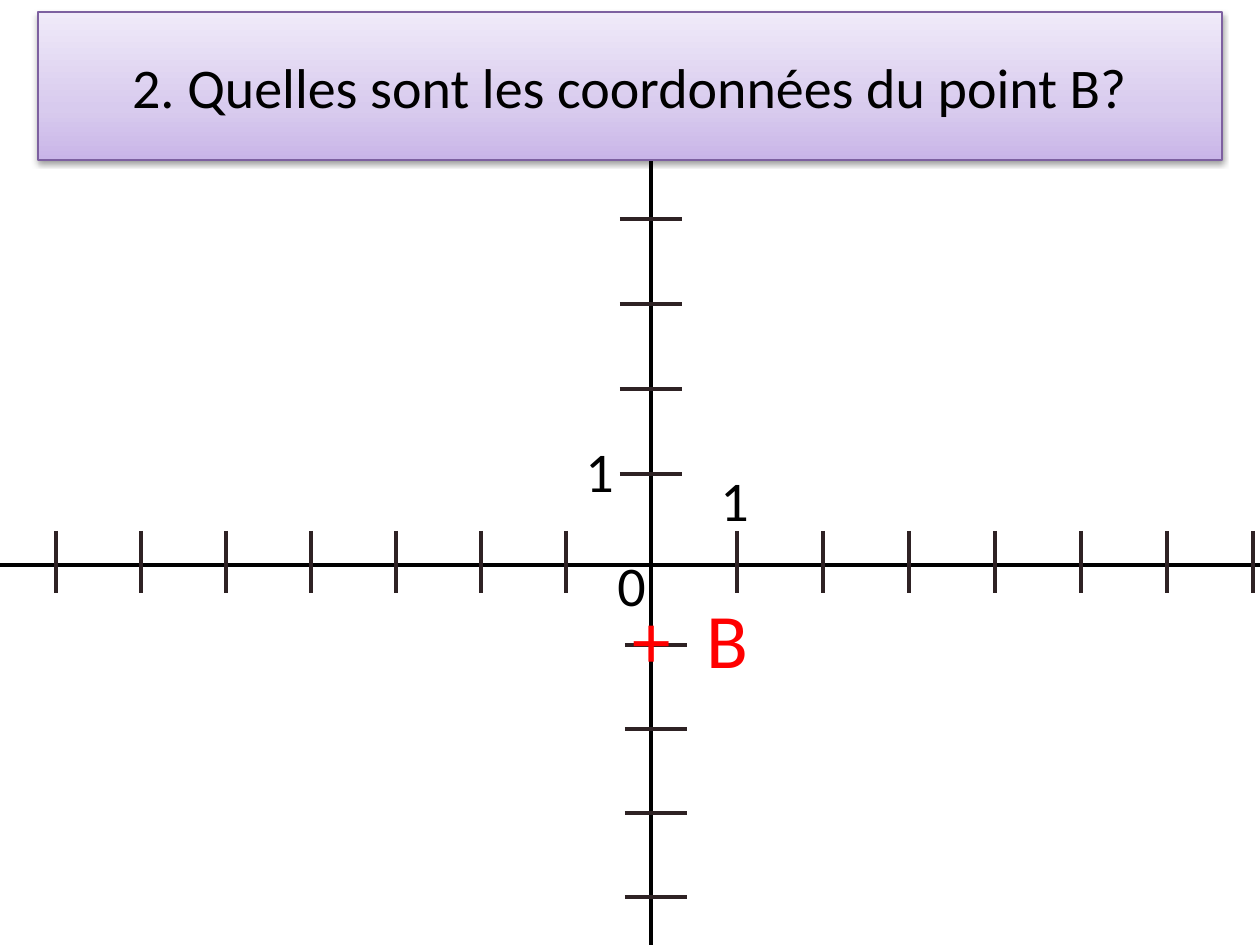
"""Build a slide that asks for the coordinates of a point on a pair of axes."""
import copy

import pptx
import pptx.dml.color
import pptx.enum.shapes
import pptx.enum.text
import pptx.oxml
import pptx.oxml.ns
import pptx.oxml.xmlchemy
import pptx.util

SCALE = 914400 // 126
WIDE, HIGH = 1260, 945
MID_X, MID_Y = 651, 565
TICK = 62
HEX = {
    "ink": "000000",
    "tick": "2E2224",
    "point": "FF0000",
    "edge": "7D60A0",
    "deep": "C9B5E8",
    "soft": "D8CBEE",
    "pale": "F0EAF9",
}
FRAME = {"word_wrap": True, "auto_size": pptx.enum.text.MSO_AUTO_SIZE.SHAPE_TO_FIT_TEXT}
BANNER = {"word_wrap": True, "vertical_anchor": pptx.enum.text.MSO_ANCHOR.MIDDLE}


def px(*sizes):
    """Turn pixel lengths into EMU."""
    return [pptx.util.Emu(size * SCALE) for size in sizes]


def tint(name):
    """Return the named colour."""
    return pptx.dml.color.RGBColor.from_string(HEX[name])


def apply(thing, values):
    """Set each attribute in a dict of format values."""
    for key, value in values.items():
        setattr(thing, key, value)


def write(frame, text, size, color, style):
    """Fill a text frame with one styled run."""
    apply(frame, style)
    run = frame.paragraphs[0].add_run()
    run.text = text
    apply(run.font, {"name": "Calibri", "size": pptx.util.Pt(size)})
    run.font.color.rgb = tint(color)


def add_line(slide, ends, color):
    """Draw a straight line without a shadow."""
    kind = pptx.enum.shapes.MSO_CONNECTOR.STRAIGHT
    line = slide.shapes.add_connector(kind, *px(*ends))
    line.line.color.rgb = tint(color)
    line.line.width = pptx.util.Pt(2.25)
    line._element.spPr.append(pptx.oxml.xmlchemy.OxmlElement("a:effectLst"))


def add_label(slide, text, box, size=32, color="ink"):
    """Place a text label."""
    label = slide.shapes.add_textbox(*px(*box))
    write(label.text_frame, text, size, color, FRAME)


def add_shade(shape):
    """Give a shape a soft shadow below it."""
    shape.shadow.inherit = False
    space = pptx.oxml.ns.nsdecls("a")
    shade = pptx.oxml.parse_xml(
        f'<a:outerShdw {space} blurRad="40000" dist="20000" dir="5400000" rotWithShape="0">'
        f'<a:srgbClr val="{HEX["ink"]}"><a:alpha val="38000"/></a:srgbClr></a:outerShdw>'
    )
    shape._element.spPr.find(pptx.oxml.ns.qn("a:effectLst")).append(shade)


def add_title(slide, text, box):
    """Draw the title banner with its gradient."""
    kind = pptx.enum.shapes.MSO_SHAPE.RECTANGLE
    title = slide.shapes.add_shape(kind, *px(*box))
    title.fill.gradient()
    title.fill.gradient_angle = 90
    stops = title._element.spPr.find(".//" + pptx.oxml.ns.qn("a:gsLst"))
    stops.insert(1, copy.deepcopy(stops[0]))
    shades = zip(title.fill.gradient_stops, (0, 0.35, 1), ("deep", "soft", "pale"))
    for stop, place, name in shades:
        stop.position = place
        stop.color.rgb = tint(name)
    title.line.color.rgb = tint("edge")
    title.line.width = pptx.util.Pt(0.75)
    add_shade(title)
    write(title.text_frame, text, 32, "ink", BANNER)
    title.text_frame.paragraphs[0].alignment = pptx.enum.text.PP_ALIGN.CENTER


def add_axes(slide, top):
    """Draw both axes and their ticks."""
    add_line(slide, (0, MID_Y, WIDE, MID_Y), "ink")
    add_line(slide, (MID_X, HIGH, MID_X, top), "ink")
    for row in (range(56, MID_X - 80, 85), range(737, WIDE, 86)):
        for x in row:
            add_line(slide, (x, 531, x, 531 + TICK), "tick")
    for left, column in ((620, range(219, MID_Y - 80, 85)), (625, range(645, HIGH, 84))):
        for y in column:
            add_line(slide, (left, y, left + TICK, y), "tick")


def main():
    """Build and save the slide."""
    deck = pptx.Presentation()
    deck.slide_width, deck.slide_height = px(WIDE, HIGH)
    slide = deck.slides.add_slide(deck.slide_layouts[6])
    banner = (38, 12, 1184, 148)
    add_axes(slide, banner[1] + banner[3])
    for text, left in (("+", 620), ("B", 694)):
        add_label(slide, text, (left, 585, 74, 106), 44, "point")
    add_title(slide, "2. Quelles sont les coordonnées du point B?", banner)
    for text, left, top in (("1", 573, 430), ("1", 708, 459), ("0", 605, 544)):
        add_label(slide, text, (left, top, 63, 81))
    deck.save("out.pptx")


if __name__ == "__main__":
    main()
